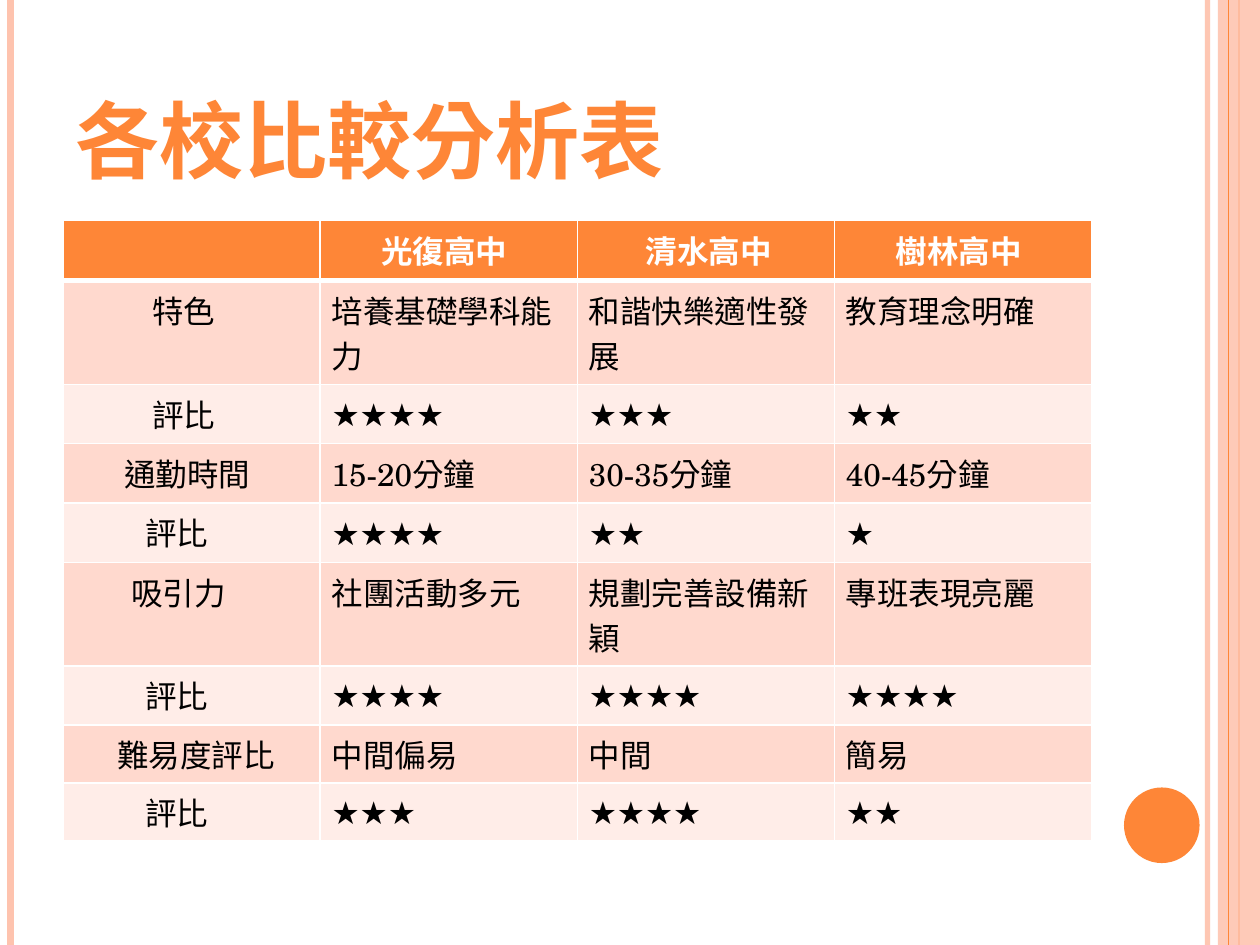
from lxml.etree import SubElement
from pptx import Presentation
from pptx.dml.color import RGBColor
from pptx.enum.shapes import MSO_CONNECTOR, MSO_SHAPE
from pptx.enum.text import MSO_ANCHOR
from pptx.oxml.ns import qn
from pptx.util import Pt

STRAIGHT = MSO_CONNECTOR.STRAIGHT
RECT = MSO_SHAPE.RECTANGLE
OVAL = MSO_SHAPE.OVAL
BOTTOM = MSO_ANCHOR.BOTTOM

FONT = "TeX Gyre Schola"
ORANGE, PEACH, WHITE, BLACK = "FE8637", "FEC3AE", "FFFFFF", "000000"
BANDS = ["FFD9CE", "FFEDE8"]

HEAD = [("", 0), ("光復高中", 28.5), ("清水高中", 32.5), ("樹林高中", 28.5)]
BODY = [
    [("特色", 44.5), "培養基礎學科能力", "和諧快樂適性發展", "教育理念明確"],
    [("評比", 44.5), 4, 3, 2],
    [("通勤時間", 28.5), "15-20分鐘", "30-35分鐘", "40-45分鐘"],
    [("評比", 40.5), 4, 2, 1],
    [("吸引力", 32.5), "社團活動多元", "規劃完善設備新穎", "專班表現亮麗"],
    [("評比", 40.5), 4, 4, 4],
    [("難易度評比", 24.5), "中間偏易", "中間", "簡易"],
    [("評比", 40.5), 3, 4, 2],
]
HEIGHTS = [34.3, 59.3, 33.9, 34, 33.9, 59.2, 33.7, 33.2, 33.2]


def color(text):
    return RGBColor.from_string(text)


def fade(fill, alpha):
    tint = fill.find(".//" + qn("a:srgbClr"))
    SubElement(tint, qn("a:alpha")).set("val", str(alpha * 1000))


class Deck:
    """Holds the style and the current slide."""

    def __init__(self, wide, high):
        self.prs = Presentation()
        self.prs.slide_width, self.prs.slide_height = Pt(wide), Pt(high)
        self.high = high
        self.slide = self.prs.slides.add_slide(self.prs.slide_layouts[6])
        self.shapes = self.slide.shapes

    def stripe(self, x, tint, width, alpha=100):
        line = self.shapes.add_connector(STRAIGHT, Pt(x), 0, Pt(x), Pt(self.high))
        line.line.color.rgb = color(tint)
        line.line.width = Pt(width)
        props = line._element.spPr
        if alpha < 100:
            fade(props, alpha)
        SubElement(props, qn("a:effectLst"))

    def shape(self, kind, x, y, wide, high, tint, alpha=100):
        item = self.shapes.add_shape(kind, Pt(x), Pt(y), Pt(wide), Pt(high))
        item.shadow.inherit = False
        item.fill.solid()
        item.fill.fore_color.rgb = color(tint)
        item.line.fill.background()
        if alpha < 100:
            fade(item._element.spPr, alpha)

    def run(self, para, text, size, tint, bold):
        run = para.add_run()
        run.text = text
        font = run.font
        font.name, font.size, font.bold = FONT, Pt(size), bold
        font.color.rgb = color(tint)
        run._r.get_or_add_rPr().set("lang", "zh-TW")

    def title(self, x, y, wide, high, text):
        frame = self.shapes.add_textbox(Pt(x), Pt(y), Pt(wide), Pt(high)).text_frame
        frame.word_wrap = True
        frame.vertical_anchor = BOTTOM
        self.run(frame.paragraphs[0], text, 48, ORANGE, True)

    def edges(self, cell, top, bottom):
        props = cell._tc.get_or_add_tcPr()
        for side, width in zip("LRTB", (1, 1, top, bottom)):
            edge = SubElement(props, qn(f"a:ln{side}"), w=str(Pt(width)))
            fill = SubElement(edge, qn("a:solidFill"))
            SubElement(fill, qn("a:srgbClr"), val=WHITE)

    def cell(self, cell, item, row):
        if isinstance(item, int):
            item = "★" * item
        text, indent = item if isinstance(item, tuple) else (item, 0)
        self.edges(cell, 3 if row == 1 else 1, 3 if row == 0 else 1)
        cell.margin_left = cell.margin_right = Pt(6.5)
        cell.fill.solid()
        cell.fill.fore_color.rgb = color(BANDS[(row - 1) % 2] if row else ORANGE)
        para = cell.text_frame.paragraphs[0]
        if indent:
            para._p.get_or_add_pPr().set("marL", str(Pt(indent)))
        if text:
            self.run(para, text, 18, BLACK if row else WHITE, row == 0)

    def table(self, x, y, wide, highs, rows):
        table = self.shapes.add_table(
            len(rows), len(rows[0]), Pt(x), Pt(y), Pt(wide), Pt(sum(highs))).table
        table.first_row = table.horz_banding = False
        for row, (high, items) in enumerate(zip(highs, rows)):
            table.rows[row].height = Pt(high)
            for col, item in enumerate(items):
                self.cell(table.cell(row, col), item, row)

    def save(self):
        self.prs.save("out.pptx")


def main():
    deck = Deck(720, 540)
    deck.stripe(690, PEACH, 3, 93)
    deck.stripe(6, PEACH, 4.5)
    deck.stripe(708, ORANGE, 1.5)
    deck.shape(RECT, 696, 0, 24, 540, PEACH, 87)
    deck.stripe(702, ORANGE, 0.75)
    deck.shape(OVAL, 642.3, 450, 43.2, 43.2, ORANGE)
    deck.title(36, 21.6, 588, 90, "各校比較分析表")
    deck.table(36, 126, 588, HEIGHTS, [HEAD] + BODY)
    deck.save()


if __name__ == "__main__":
    main()
